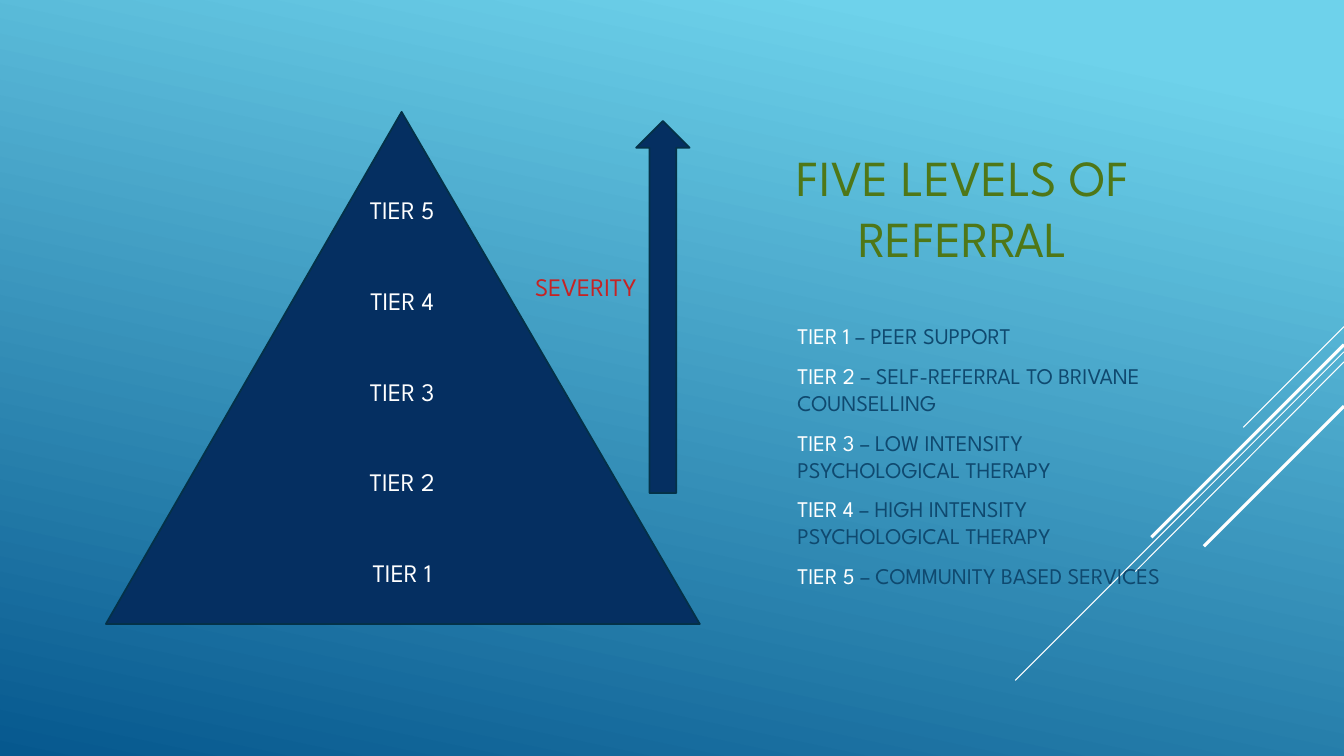
from lxml import etree
from pptx import Presentation
from pptx.dml.color import RGBColor
from pptx.enum.shapes import MSO_CONNECTOR, MSO_SHAPE
from pptx.enum.text import MSO_ANCHOR, MSO_AUTO_SIZE, PP_ALIGN
from pptx.oxml.ns import qn
from pptx.util import Inches, Pt

FONT = "League Spartan"
WHITE, NAVY, EDGE = "FFFFFF", "052F61", "043148"
GREEN, RED, BLUE = "4F7717", "C62324", "0F496F"
GRADIENT = [(0.1, "6ED2EB"), (1, "06588E")]

TITLE = "FIVE LEVELS OF REFERRAL"
SERVICES = [
    "PEER SUPPORT",
    "SELF-REFERRAL TO BRIVANE COUNSELLING",
    "LOW INTENSITY PSYCHOLOGICAL THERAPY",
    "HIGH INTENSITY PSYCHOLOGICAL THERAPY",
    "COMMUNITY BASED SERVICES",
]
TIERS = [f"TIER {n}" for n in range(1, len(SERVICES) + 1)]
# Diagonal stripes from the right edge: start y, end x, end y, width in points
STRIPES = [
    (3.24, 12.33, 4.24, 0.75),
    (3.49, 10.07, 6.75, 0.75),
    (3.59, 11.26, 5.67, 0.75),
    (3.42, 11.42, 5.33, 2.25),
    (4.03, 11.94, 5.42, 2.25),
]


def rgb(value):
    return RGBColor.from_string(value)


def write(tf, paragraphs, size, align=PP_ALIGN.LEFT, anchor=MSO_ANCHOR.TOP, before=0, after=0):
    """Fill a text frame; each paragraph is a list of (text, colour) runs."""
    tf.word_wrap = True
    tf.auto_size = MSO_AUTO_SIZE.NONE
    tf.vertical_anchor = anchor
    for i, runs in enumerate(paragraphs):
        p = tf.add_paragraph() if i else tf.paragraphs[0]
        p.alignment = align
        p.space_before, p.space_after = Pt(before), Pt(after)
        for text, color in runs:
            r = p.add_run()
            r.text = text
            r.font.name, r.font.size = FONT, Pt(size)
            r.font.color.rgb = rgb(color)


def add_navy_shape(s, kind, *box):
    sp = s.shapes.add_shape(kind, *map(Inches, box))
    sp.shadow.inherit = False
    sp.fill.solid()
    sp.fill.fore_color.rgb = rgb(NAVY)
    sp.line.color.rgb = rgb(EDGE)
    sp.line.width = Pt(1.25)
    return sp


def add_text(s, *box):
    return s.shapes.add_textbox(*map(Inches, box)).text_frame


def add_stripe(s, y1, x2, y2, width):
    line = s.shapes.add_connector(
        MSO_CONNECTOR.STRAIGHT, prs.slide_width, Inches(y1), Inches(x2), Inches(y2))
    line.line.color.rgb = rgb(WHITE)
    line.line.width = Pt(width)
    etree.SubElement(line._element.spPr, qn("a:effectLst"))


prs = Presentation()
prs.slide_width, prs.slide_height = Inches(13.33), Inches(7.5)
s = prs.slides.add_slide(prs.slide_layouts[5])

fill = s.background.fill
fill.gradient()
fill.gradient_angle = 360 - 102
for stop, (position, color) in zip(fill.gradient_stops, GRADIENT):
    stop.position = position
    stop.color.rgb = rgb(color)

for stripe in STRIPES:
    add_stripe(s, *stripe)

title = s.shapes.title
title.left, title.top, title.width, title.height = map(Inches, (7.55, 1.11, 4, 1.59))
write(title.text_frame, [[(TITLE, GREEN)]], 36, align=PP_ALIGN.CENTER, anchor=MSO_ANCHOR.BOTTOM)

services = [[(f"{tier} ", WHITE), (f"– {service}", BLUE)]
            for tier, service in zip(TIERS, SERVICES)]
write(add_text(s, 7.81, 3.15, 4, 3.78), services, 16, before=3.2, after=6)

pyramid = add_navy_shape(s, MSO_SHAPE.ISOSCELES_TRIANGLE, 1.05, 1.11, 5.89, 5.08)
pyramid.adjustments[0] = 0.498
pyramid.text_frame.margin_bottom = Inches(0.36)
write(pyramid.text_frame, [[(tier, WHITE)] for tier in reversed(TIERS)], 18,
      align=PP_ALIGN.CENTER, anchor=MSO_ANCHOR.BOTTOM, before=43.2)

add_navy_shape(s, MSO_SHAPE.UP_ARROW, 6.31, 1.2, 0.53, 3.69)
write(add_text(s, 5.21, 2.64, 1.35, 0.4), [[("SEVERITY", RED)]], 18)

prs.save("out.pptx")
